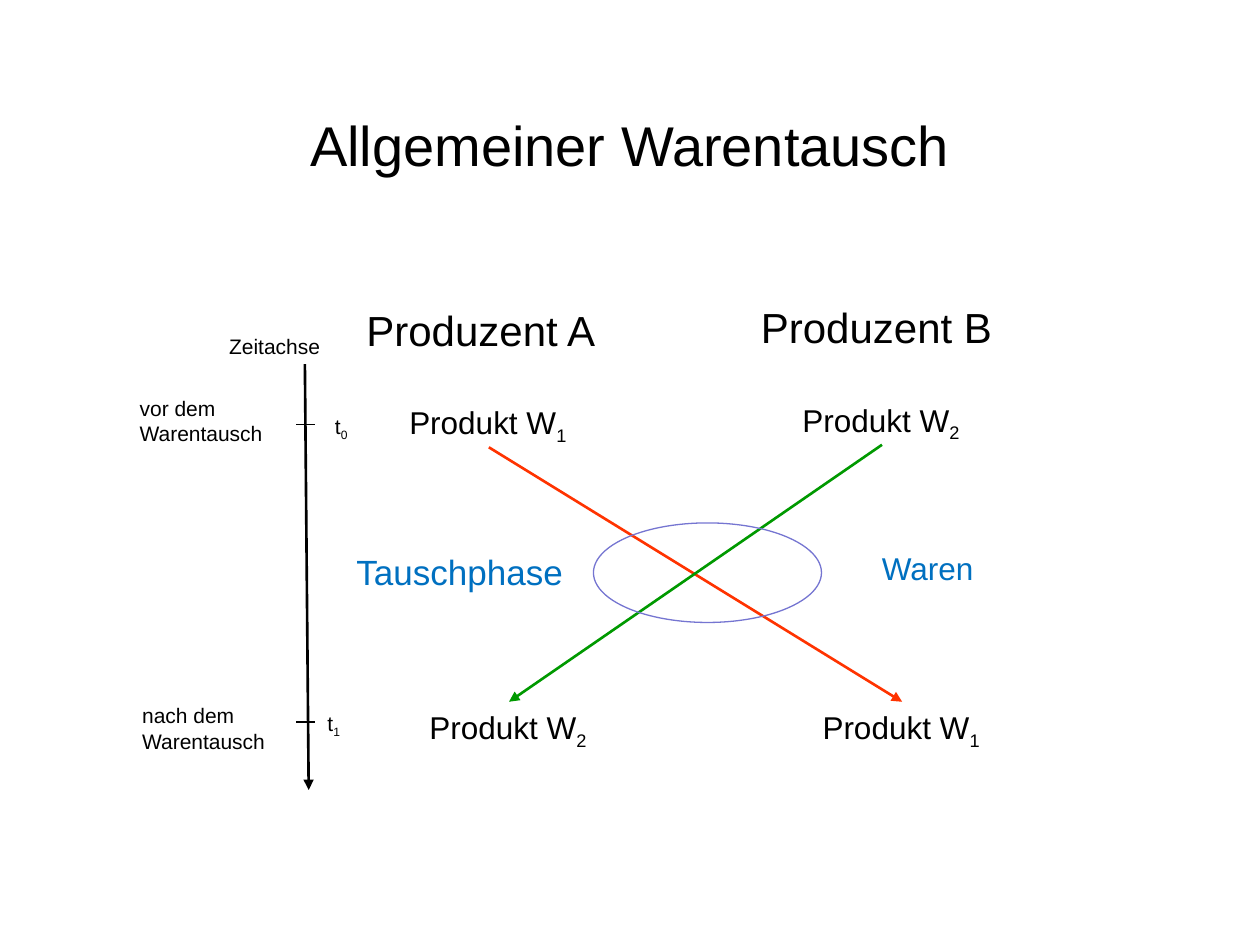
import pptx
import pptx.dml.color
import pptx.enum.shapes
import pptx.enum.text
import pptx.oxml
import pptx.oxml.ns
import pptx.util
from pptx.util import Inches

RGBColor = pptx.dml.color.RGBColor
BLACK = RGBColor(0x00, 0x00, 0x00)
BLUE = RGBColor(0x00, 0x70, 0xC0)
RED = RGBColor(0xFF, 0x33, 0x00)
GREEN = RGBColor(0x00, 0x99, 0x00)
VIOLET = RGBColor(0x75, 0x75, 0xD1)
BOTTOM, TOP = 2, 0


class ExchangeSlide:
    font_name = "Arial"

    def __init__(self, presentation):
        self.slide = presentation.slides.add_slide(presentation.slide_layouts[5])

    def format_font(self, font, size, color):
        for name, value in {"name": self.font_name, "size": pptx.util.Pt(size)}.items():
            setattr(font, name, value)
        font.color.rgb = color

    def title(self, text, left, top, width, height):
        heading = self.slide.shapes.title
        place = {"left": left, "top": top, "width": width, "height": height}
        for name, value in place.items():
            setattr(heading, name, Inches(value))
        heading.text_frame.text = text
        heading.text_frame.vertical_anchor = pptx.enum.text.MSO_ANCHOR.MIDDLE
        paragraph = heading.text_frame.paragraphs[0]
        paragraph.alignment = pptx.enum.text.PP_ALIGN.CENTER
        self.format_font(paragraph.runs[0].font, 32, BLACK)

    def label(self, text, left, top, width, height, size, color=BLACK, subscript=""):
        box = self.slide.shapes.add_textbox(*map(Inches, (left, top, width, height)))
        frame = box.text_frame
        frame.word_wrap = False
        frame.auto_size = pptx.enum.text.MSO_AUTO_SIZE.SHAPE_TO_FIT_TEXT
        paragraph = frame.paragraphs[0]
        paragraph.text = text
        if subscript:
            index = paragraph.add_run()
            index.text = subscript
            index.font._element.set("baseline", "-25000")
        for run in paragraph.runs:
            self.format_font(run.font, size, color)
        return box

    def line(self, start, end, color, width, arrow=False):
        connector = self.slide.shapes.add_connector(
            pptx.enum.shapes.MSO_CONNECTOR.STRAIGHT, *map(Inches, start + end))
        connector.line.color.rgb = color
        connector.line.width = pptx.util.Pt(width)
        properties = connector.element.spPr
        if arrow:
            tail = pptx.oxml.parse_xml(
                f'<a:tailEnd {pptx.oxml.ns.nsdecls("a")} type="triangle"/>')
            properties.get_or_add_ln().append(tail)
        properties.append(pptx.oxml.parse_xml(
            f'<a:effectLst {pptx.oxml.ns.nsdecls("a")}/>'))
        return connector

    def exchange_arrow(self, giver, receiver, color):
        arrow = self.line((0, 0), (1, 1), color, 1.5, arrow=True)
        arrow.begin_connect(giver, BOTTOM)
        arrow.end_connect(receiver, TOP)

    def ellipse(self, left, top, width, height, color):
        oval = self.slide.shapes.add_shape(
            pptx.enum.shapes.MSO_SHAPE.OVAL, *map(Inches, (left, top, width, height)))
        oval.shadow.inherit = False
        oval.fill.background()
        oval.line.color.rgb = color
        oval.line.width = pptx.util.Pt(0.75)


def main():
    presentation = pptx.Presentation()
    presentation.slide_width, presentation.slide_height = Inches(10), Inches(7.5)
    page = ExchangeSlide(presentation)
    page.title("Allgemeiner Warentausch", 0.5, 0.52, 9, 1.25)

    a_before, a_after, b_before, b_after = [
        page.label("Produkt W", left, top, 1.46, 0.4, 18, subscript=number)
        for left, top, number in (
            (3.15, 3.15, "1"), (3.31, 5.57, "2"), (6.27, 3.13, "2"), (6.43, 5.57, "1"))
    ]
    page.label("Produzent A", 2.81, 2.37, 2.04, 0.5, 24)
    page.label("Produzent B", 5.94, 2.34, 2.05, 0.5, 24)

    page.label("Zeitachse", 1.72, 2.6, 0.92, 0.3, 12)
    page.line((2.42, 2.89), (2.45, 6.27), BLACK, 1.5, arrow=True)
    moments = (
        ("vor dem\vWarentausch", 1.01, 3.37, 2.56, "0"),
        ("nach dem\vWarentausch", 1.03, 5.73, 2.5, "1"),
    )
    for moment, moment_left, tick, time_left, number in moments:
        page.label(moment, moment_left, tick - 0.28 + 0.08 * int(number), 1.18, 0.51, 12)
        page.line((2.35, tick), (2.5, tick), BLACK, 0.75)
        page.label("t", time_left, tick - 0.14, 0.31, 0.3, 12, subscript=number)

    page.exchange_arrow(a_before, b_after, RED)
    page.exchange_arrow(b_before, a_after, GREEN)
    page.ellipse(4.71, 4.15, 1.81, 0.79, VIOLET)
    page.label("Waren", 6.9, 4.31, 0.94, 0.4, 18, BLUE)
    page.label("Tauschphase", 2.73, 4.32, 1.86, 0.44, 20, BLUE)

    presentation.save("out.pptx")


if __name__ == "__main__":
    main()
